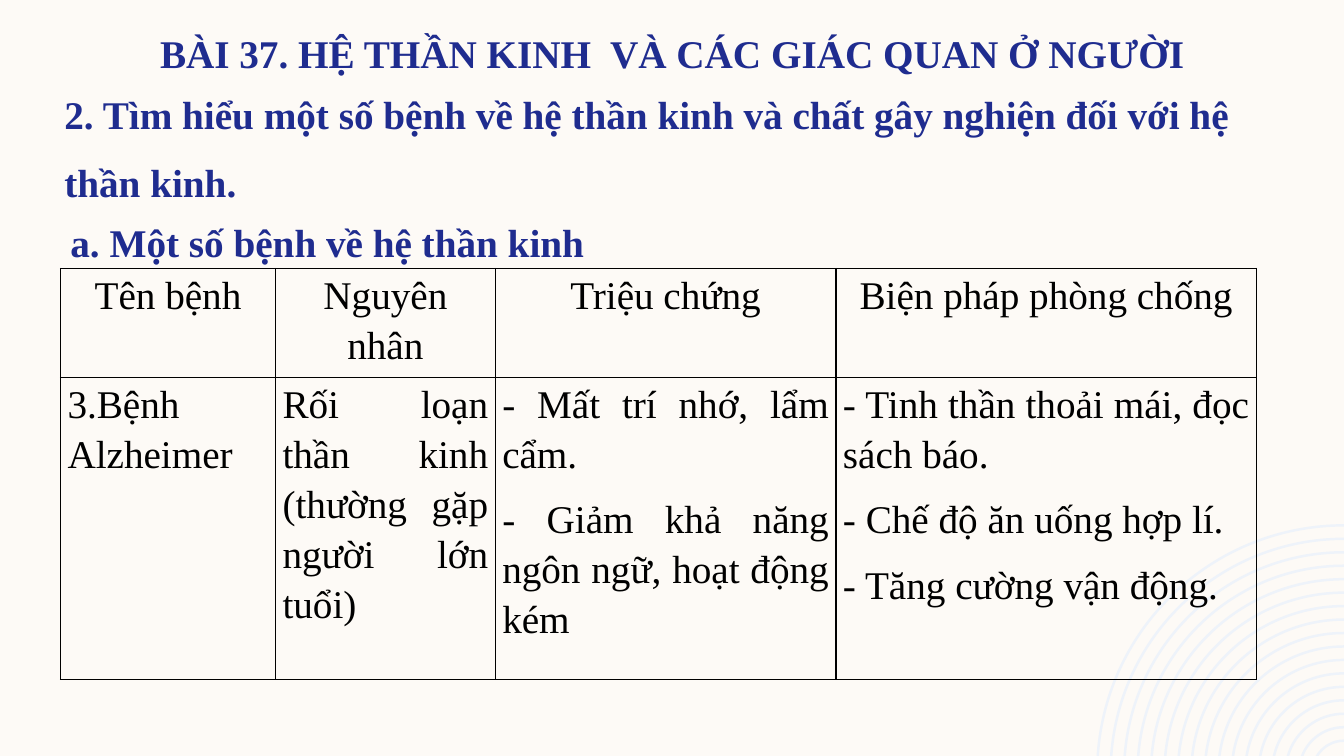
from dataclasses import dataclass
from math import asin, cos, pi, sin, tan

from lxml.etree import SubElement
from pptx import Presentation
from pptx.dml.color import RGBColor
from pptx.enum.text import MSO_ANCHOR, PP_ALIGN
from pptx.oxml.ns import qn
from pptx.util import Inches, Pt

SLIDE_WIDTH, SLIDE_HEIGHT = Inches(13.33), Inches(7.5)


@dataclass(frozen=True)
class Theme:
    font: str = "Times New Roman"
    size: int = 28
    heading_spacing: float = 48.8
    body_spacing: float = 1.15
    border: float = 1
    background: RGBColor = RGBColor(0xFD, 0xFA, 0xF6)
    heading: RGBColor = RGBColor(0x1F, 0x2C, 0x8F)
    body: RGBColor = RGBColor(0, 0, 0)
    rings: RGBColor = RGBColor(0xEE, 0xF3, 0xFA)


THEME = Theme()

COLUMN_WIDTHS = [16, 16.35, 25.35, 31.28]
ROW_HEIGHTS = [14.4, 40]
DISEASE_TABLE = [
    [["Tên bệnh"], ["Nguyên nhân"], ["Triệu chứng"], ["Biện pháp phòng chống"]],
    [
        ["3.Bệnh Alzheimer"],
        ["Rối loạn thần kinh (thường gặp người lớn tuổi)"],
        ["- Mất trí nhớ, lẩm cẩm.", "- Giảm khả năng ngôn ngữ, hoạt động kém"],
        [
            "- Tinh thần thoải mái, đọc sách báo.",
            "- Chế độ ăn uống hợp lí.",
            "- Tăng cường vận động.",
        ],
    ],
]


def across(columns):
    """Length of some hundredths of the slide's width."""
    return round(SLIDE_WIDTH * columns / 100)


def down(rows):
    """Length of some hundredths of the slide's height."""
    return round(SLIDE_HEIGHT * rows / 100)


def write(frame, lines, align, color, spacing, bold=False):
    frame.word_wrap = True
    for index, line in enumerate(lines):
        paragraph = frame.paragraphs[0] if index == 0 else frame.add_paragraph()
        paragraph.text = line
        paragraph.alignment = align
        paragraph.line_spacing = spacing
        if index:
            paragraph.space_before = Pt(8)
        paragraph.space_after = Pt(3 if index < len(lines) - 1 else 0)
        font = paragraph.font
        font.name, font.size, font.bold = THEME.font, Pt(THEME.size), bold
        font.color.rgb = color


def add_heading(slide, text, left, top, width, height, align, spacing, inset_top=0):
    box = slide.shapes.add_textbox(across(left), down(top), across(width), down(height))
    box.text_frame.margin_top = Inches(inset_top)
    write(box.text_frame, [text], align, THEME.heading, spacing, bold=True)


def add_borders(cell):
    properties = cell._tc.get_or_add_tcPr()
    for position, side in enumerate(("a:lnL", "a:lnR", "a:lnT", "a:lnB")):
        line = SubElement(properties, qn(side), w=str(Pt(THEME.border)))
        fill = SubElement(line, qn("a:solidFill"))
        SubElement(fill, qn("a:srgbClr"), val=str(THEME.body))
        properties.insert(position, line)


def add_disease_table(slide, left, top):
    table = slide.shapes.add_table(
        len(ROW_HEIGHTS), len(COLUMN_WIDTHS), across(left), down(top),
        across(sum(COLUMN_WIDTHS)), down(sum(ROW_HEIGHTS)),
    ).table
    table.first_row = table.horz_banding = False
    for column, width in zip(table.columns, COLUMN_WIDTHS):
        column.width = across(width)
    for row_index, (row, height) in enumerate(zip(table.rows, ROW_HEIGHTS)):
        row.height = down(height)
        align = PP_ALIGN.JUSTIFY if row_index else PP_ALIGN.CENTER
        for cell, lines in zip(row.cells, DISEASE_TABLE[row_index]):
            cell.margin_left = cell.margin_right = Inches(0.07)
            cell.margin_top = cell.margin_bottom = 0
            cell.vertical_anchor = MSO_ANCHOR.TOP
            cell.fill.background()
            add_borders(cell)
            write(cell.text_frame, lines, align, THEME.body, THEME.body_spacing)


def arc_points(radius, center_y):
    """Four Bézier points from the slide's bottom edge up to its right edge."""
    start = asin((center_y - SLIDE_HEIGHT) / radius)
    reach = 4 / 3 * tan((pi / 2 - start) / 4)
    offsets = [
        (cos(start), sin(start)),
        (cos(start) - reach * sin(start), sin(start) + reach * cos(start)),
        (reach, 1),
        (0, 1),
    ]
    return [
        (round(SLIDE_WIDTH - radius * x), round(center_y - radius * y))
        for x, y in offsets
    ]


def curve_arcs(shape):
    """Turn the first and last three line segments of each ring into curves."""
    lines = list(shape._element.iter(qn("a:lnTo")))
    for first in range(0, len(lines), 7):
        for start in (first, first + 3 + 1):
            curve = SubElement(lines[start].getparent(), qn("a:cubicBezTo"))
            lines[start].addprevious(curve)
            for line in lines[start:start + 3]:
                curve.append(line[0])
                line.getparent().remove(line)


def add_corner_rings(slide, count=17, outer=32.8, pitch=1.78, thickness=0.33):
    center_y = down(102.13)
    builder = None
    for index in range(count):
        radius = outer - index * pitch
        outline = arc_points(down(radius), center_y)
        outline += reversed(arc_points(down(radius - thickness), center_y))
        if builder is None:
            builder = slide.shapes.build_freeform(*outline[0])
        else:
            builder.move_to(*outline[0])
        builder.add_line_segments(outline[1:], close=True)
    shape = builder.convert_to_shape()
    curve_arcs(shape)
    shape.shadow.inherit = False
    shape.fill.solid()
    shape.fill.fore_color.rgb = THEME.rings
    shape.line.fill.background()


def main():
    presentation = Presentation()
    presentation.slide_width, presentation.slide_height = SLIDE_WIDTH, SLIDE_HEIGHT
    slide = presentation.slides.add_slide(presentation.slide_layouts[6])
    slide.background.fill.solid()
    slide.background.fill.fore_color.rgb = THEME.background

    add_corner_rings(slide)
    exact = Pt(THEME.heading_spacing)
    add_heading(slide, "BÀI 37. HỆ THẦN KINH  VÀ CÁC GIÁC QUAN Ở NGƯỜI",
                0, 1.07, 100, 8.67, PP_ALIGN.CENTER, exact)
    add_heading(slide, "2. Tìm hiểu một số bệnh về hệ thần kinh và chất gây nghiện "
                "đối với hệ thần kinh.",
                4.05, 9.07, 92.5, 8.67, PP_ALIGN.LEFT, exact)
    add_disease_table(slide, 4.5, 35.5)
    add_heading(slide, "a. Một số bệnh về hệ thần kinh",
                4.5, 27.33, 50, 8.13, PP_ALIGN.JUSTIFY, THEME.body_spacing, 0.05)
    presentation.save("out.pptx")


if __name__ == "__main__":
    main()
